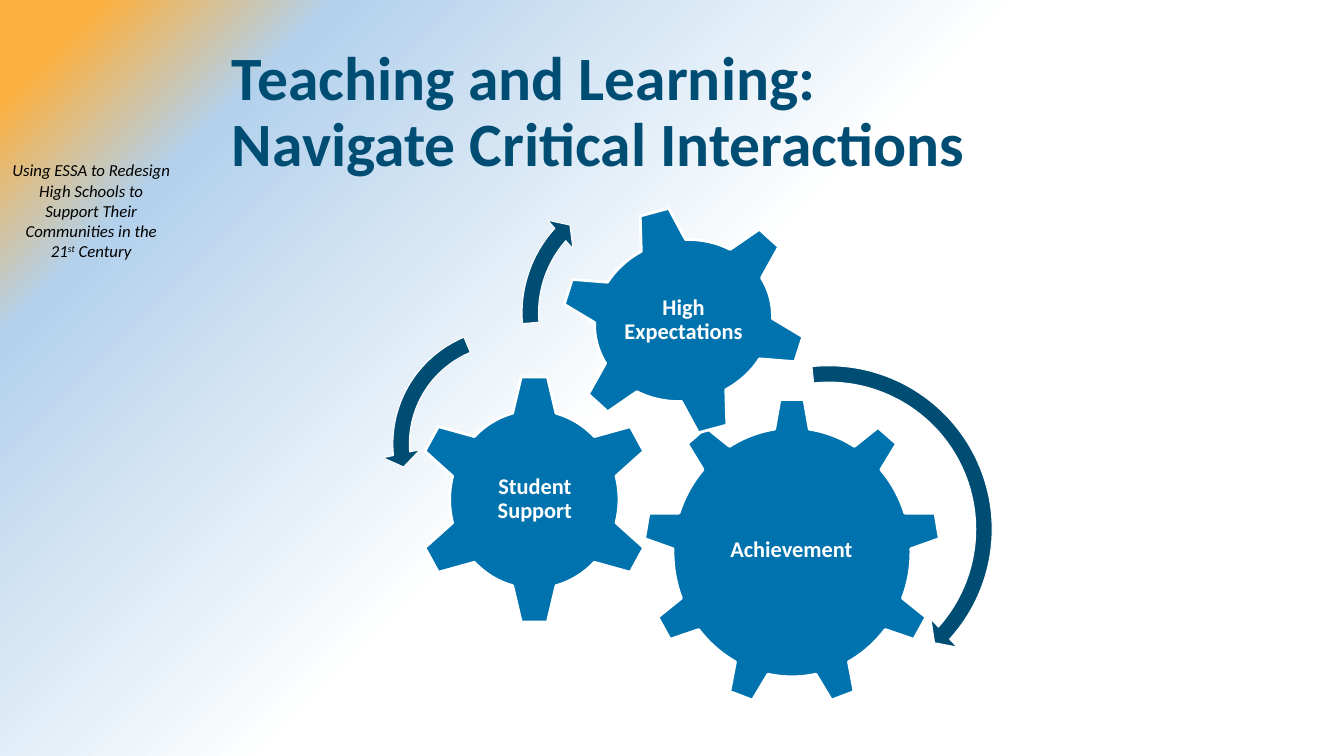
from pptx import Presentation
from pptx.dml.color import RGBColor
from pptx.enum import shapes, text
from pptx.oxml import parse_xml
from pptx.oxml.ns import nsdecls
from pptx.util import Inches, Pt

COLORS = {
    "navy": "004D74",
    "blue": "0073AE",
    "sky": "B3D1EC",
    "orange": "FBB040",
    "white": "FFFFFF",
    "black": "000000",
}
SHAPE = shapes.MSO_SHAPE

# Gear type, gear box, rotation, label, label box
GEARS = [
    (SHAPE.GEAR_9, (6.38, 3.95, 2.95, 3.06), 0,
     "Achievement", (6.97, 4.66, 1.76, 1.59)),
    (SHAPE.GEAR_6, (4.1, 3.71, 2.4, 2.49), 0,
     "Student Support", (4.71, 4.33, 1.19, 1.25)),
    (SHAPE.GEAR_6, (5.55, 2.04, 2.46, 2.28), 345,
     "High Expectations", (6.1, 2.53, 1.36, 1.3)),
]

# Arrow type, left, top, size, adjustments
ARROWS = [
    (SHAPE.CIRCULAR_ARROW, 6.49, 3.52, 3.46,
     (0.047, 2.99, 25.229, 158.467, 0.055)),
    (SHAPE.LEFT_CIRCULAR_ARROW, 3.79, 3.15, 2.51,
     (0.065, 4.3, 104.891, 148.378, 0.075)),
    (SHAPE.CIRCULAR_ARROW, 5.07, 1.75, 2.71,
     (0.06, 3.941, 133.138, 105.082, 0.07)),
]


def rgb(name):
    return RGBColor.from_string(COLORS[name])


def box(values):
    return [Inches(v) for v in values]


def set_font(p, size, color, bold=False, italic=False):
    p.font.name = "Calibri"
    p.font.size = Pt(size)
    p.font.bold = bold
    p.font.italic = italic
    p.font.color.rgb = rgb(color)


def set_background(s):
    stops = [(0, "white", 100), (51, "white", 100),
             (84, "sky", 50), (95, "orange", 100)]
    gs = "".join(
        f'<a:gs pos="{pos * 1000}"><a:srgbClr val="{COLORS[name]}">'
        f'<a:alpha val="{alpha * 1000}"/></a:srgbClr></a:gs>'
        for pos, name, alpha in stops)
    bg = parse_xml(
        f'<p:bg {nsdecls("p", "a")}><p:bgPr><a:gradFill><a:gsLst>{gs}</a:gsLst>'
        '<a:path path="circle"><a:fillToRect l="100000" t="100000"/></a:path>'
        '</a:gradFill><a:effectLst/></p:bgPr></p:bg>')
    s.element.cSld.insert(0, bg)


def add_title(s, title):
    sp = s.shapes.title
    sp.left, sp.top, sp.width, sp.height = box((2.2, 0.4, 10.83, 1.45))
    tf = sp.text_frame
    tf.auto_size = text.MSO_AUTO_SIZE.NONE
    tf.vertical_anchor = text.MSO_ANCHOR.MIDDLE
    tf.text = title
    p = tf.paragraphs[0]
    p.alignment = text.PP_ALIGN.LEFT
    p.line_spacing = 0.9
    set_font(p, 44, "navy", bold=True)


def add_side_note(s):
    sp = s.shapes.add_textbox(*box((0.02, 1.54, 1.77, 1.11)))
    tf = sp.text_frame
    tf.word_wrap = True
    p = tf.paragraphs[0]
    p.alignment = text.PP_ALIGN.CENTER
    set_font(p, 12, "black", italic=True)
    for part, baseline in [
        ("Using ESSA to Redesign High Schools to Support Their "
         "Communities in the 21", 0),
        ("st", 30000),
        (" Century", 0),
    ]:
        r = p.add_run()
        r.text = part
        if baseline:
            r._r.get_or_add_rPr().set("baseline", str(baseline))


def add_figure(group, kind, place, fill, line_width):
    sp = group.shapes.add_shape(kind, *box(place))
    sp.shadow.inherit = False
    sp.fill.solid()
    sp.fill.fore_color.rgb = rgb(fill)
    sp.line.color.rgb = rgb("white")
    sp.line.width = Pt(line_width)
    return sp


def add_label(group, label, place):
    tf = group.shapes.add_textbox(*box(place)).text_frame
    tf.word_wrap = True
    tf.vertical_anchor = text.MSO_ANCHOR.MIDDLE
    tf.margin_left = tf.margin_right = Inches(0.02)
    tf.margin_top = tf.margin_bottom = Inches(0.02)
    p = tf.paragraphs[0]
    p.text = label
    p.alignment = text.PP_ALIGN.CENTER
    p.line_spacing = 0.9
    set_font(p, 16, "white", bold=True)


def add_gear(group, kind, place, rotation, label, label_place):
    sp = add_figure(group, kind, place, "blue", 2)
    sp.rotation = rotation
    add_label(group, label, label_place)


def add_arrow(group, kind, left, top, size, adjustments):
    sp = add_figure(group, kind, (left, top, size, size), "navy", 0.75)
    for i, value in enumerate(adjustments):
        sp.adjustments[i] = value


def main():
    prs = Presentation()
    prs.slide_width = Inches(13.33)
    prs.slide_height = Inches(7.5)
    s = prs.slides.add_slide(prs.slide_layouts[5])

    # Background and text
    set_background(s)
    add_side_note(s)
    add_title(s, "Teaching and Learning:\vNavigate Critical Interactions")

    # Gear diagram
    group = s.shapes.add_group_shape()
    for gear in GEARS:
        add_gear(group, *gear)
    for arrow in ARROWS:
        add_arrow(group, *arrow)

    prs.save("out.pptx")


if __name__ == "__main__":
    main()
